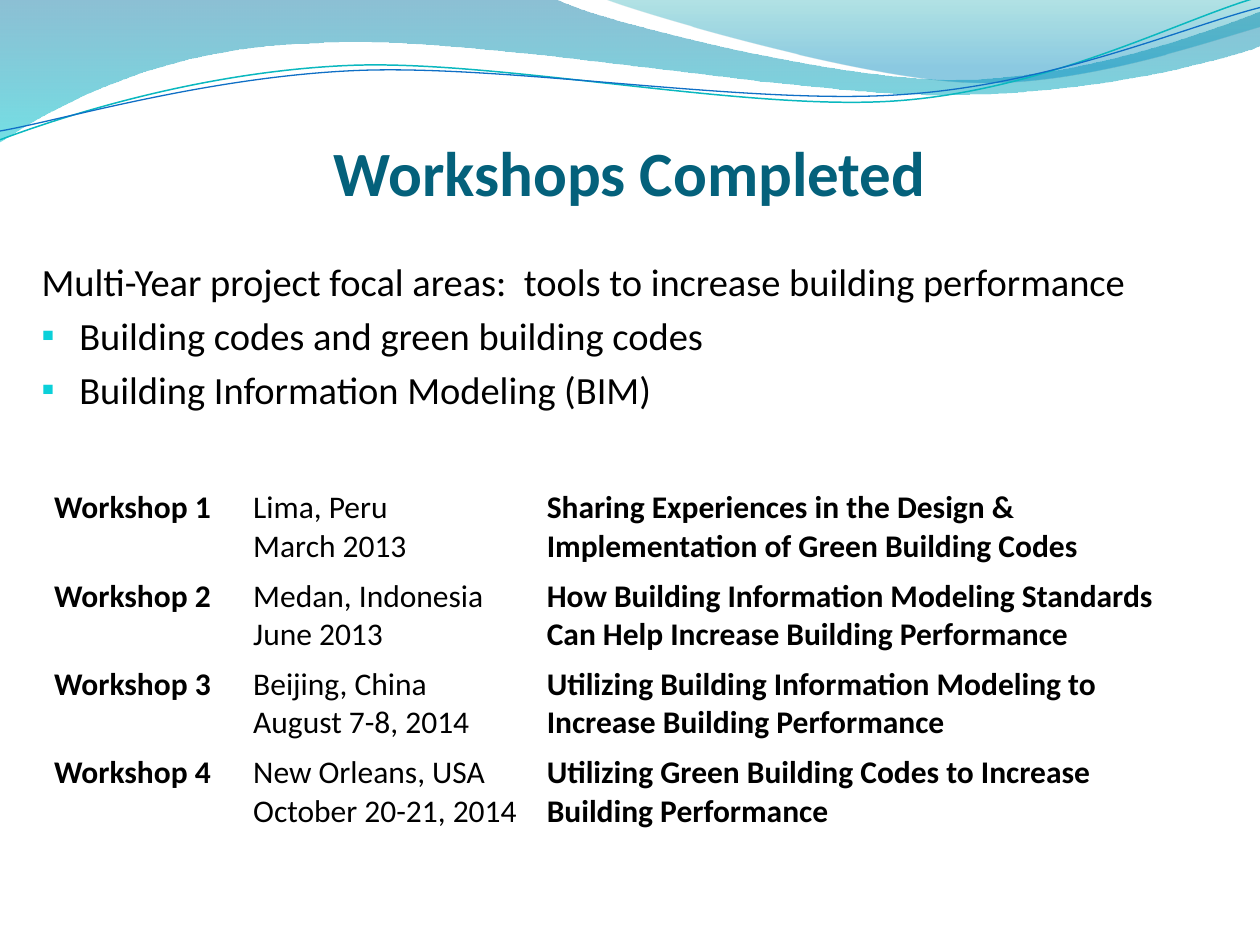
from lxml.etree import SubElement
from pptx import Presentation
from pptx.dml.color import RGBColor
from pptx.enum.text import MSO_ANCHOR as Anchor, PP_ALIGN as Align
from pptx.oxml.ns import qn
from pptx.util import Inches, Pt

TEAL_TITLE = RGBColor(0x04, 0x61, 0x7B)
BLACK = RGBColor(0, 0, 0)
BULLET = RGBColor(0x0B, 0xD0, 0xD9)
DEEP_BLUE = RGBColor(0x00, 0x74, 0xA1)
AQUA = RGBColor(0x00, 0xC6, 0xCF)
SEA_GREEN = RGBColor(0x00, 0xA1, 0xA9)
SKY_BLUE = RGBColor(0x00, 0x8B, 0xBF)
LINE_TEAL = RGBColor(0x0A, 0xB8, 0xBF)
LINE_BLUE = RGBColor(0x0F, 0x6F, 0xC6)

# Each outline is a start point, then segments: 2 numbers a line, 6 a Bezier curve
# Gradient stops are (position, colour, opacity in percent)
BANDS = [
    ([(0, 0), (4.4, -0.01), (4.76, 0.17, 6.64, 0.63, 7.58, 0.63),
      (8.53, 0.63, 9.58, 0.26, 10, 0.09), (10.01, 0.36),
      (9.83, 0.44, 8.7, 0.76, 7.46, 0.75), (6.22, 0.75, 3.82, 0.28, 2.57, 0.34),
      (1.29, 0.36, 0.46, 0.83, -0.01, 1.13)],
     [(0, DEEP_BLUE, 45), (1, AQUA, 55)]),
    ([(4.79, -0.01), (5.09, 0.11, 6.82, 0.62, 7.69, 0.65),
      (8.56, 0.69, 9.61, 0.32, 10, 0.21), (10, 0)],
     [(0, SEA_GREEN, 30), (0.8, SKY_BLUE, 45)]),
]
STRANDS = [
    ([(0, 1.11), (0.48, 0.93, 1.58, 0.57, 2.77, 0.52),
      (3.95, 0.47, 5.93, 0.89, 7.13, 0.8), (8.33, 0.71, 9.38, 0.15, 9.98, -0.02)],
     LINE_TEAL, 0.85),
    ([(0, 1.04), (0.47, 0.96, 1.64, 0.61, 2.83, 0.56),
      (4.03, 0.51, 5.97, 0.84, 7.17, 0.75), (8.36, 0.67, 9.41, 0.21, 10, 0.06)],
     LINE_BLUE, 0.75),
]
FOCAL_INTRO = "Multi-Year project focal areas:  tools to increase building performance"
FOCAL_AREAS = ["Building codes and green building codes",
               "Building Information Modeling (BIM)"]
WORKSHOPS = [
    ("Lima, Peru", "March 2013",
     "Sharing Experiences in the Design & Implementation of Green Building Codes"),
    ("Medan, Indonesia", "June 2013",
     "How Building Information Modeling Standards Can Help Increase Building Performance"),
    ("Beijing, China", "August 7-8, 2014",
     "Utilizing Building Information Modeling to Increase Building Performance"),
    ("New Orleans, USA", "October 20-21, 2014",
     "Utilizing Green Building Codes to Increase Building Performance"),
]
COLUMN_WIDTHS = [1.58, 2.33, 5.41]


def set_attrs(target, values):
    for name, value in values.items():
        setattr(target, name, value)


def write(paragraph, text, size, color=BLACK, bold=False):
    run = paragraph.add_run()
    run.text = text
    set_attrs(run.font, {"name": "Calibri", "size": Pt(size), "bold": bold})
    run.font.color.rgb = color


def add_outline(slide, origin, outline, close):
    """Draw the outline through its end points, then bend the curved segments."""
    left, top = origin
    ends = [(Inches(left + part[-2]), Inches(top + part[-1])) for part in outline]
    builder = slide.shapes.build_freeform(*ends[0], scale=1.0)
    builder.add_line_segments(ends[1:], close=close)
    shape = builder.convert_to_shape()
    shape.shadow.inherit = False
    lines = list(shape._element.spPr.iter(qn("a:lnTo")))
    for line, part in zip(lines, outline[1:]):
        if len(part) == 6:
            line.tag = qn("a:cubicBezTo")
            for index, (x, y) in enumerate([part[0:2], part[2:4]]):
                control = line.makeelement(qn("a:pt"), {
                    "x": str(Inches(left + x) - shape.left),
                    "y": str(Inches(top + y) - shape.top)})
                line.insert(index, control)
    return shape


def add_waves(slide, origin):
    # Translucent bands
    for outline, stops in BANDS:
        band = add_outline(slide, origin, outline, True)
        band.line.fill.background()
        band.fill.gradient()
        band.fill.gradient_angle = 270
        for stop, (position, color, _) in zip(band.fill.gradient_stops, stops):
            stop.position = position
            stop.color.rgb = color
        colors = band._element.spPr.iter(qn("a:srgbClr"))
        for color, (_, _, opacity) in zip(colors, stops):
            SubElement(color, qn("a:alpha"), val=str(opacity * 1000))
    # Thin strands
    for outline, color, width in STRANDS:
        strand = add_outline(slide, origin, outline, False)
        strand.fill.background()
        strand.line.color.rgb = color
        strand.line.width = Pt(width)


def add_text_frame(slide, box, values):
    frame = slide.shapes.add_textbox(*map(Inches, box)).text_frame
    set_attrs(frame, {"word_wrap": True, "margin_left": 0, "margin_right": 0, **values})
    return frame


def add_title(slide, box):
    frame = add_text_frame(slide, box, {"vertical_anchor": Anchor.BOTTOM,
                                        "margin_bottom": 0})
    heading = frame.paragraphs[0]
    heading.alignment = Align.CENTER
    write(heading, "Workshops Completed", 36, TEAL_TITLE, True)


def add_focal_areas(slide, box):
    frame = add_text_frame(slide, box, {})
    intro = frame.paragraphs[0]
    intro.space_before = Pt(4.4)
    write(intro, FOCAL_INTRO, 22)
    for area in FOCAL_AREAS:
        item = frame.add_paragraph()
        item.space_before = Pt(4.4)
        write(item, area, 22)
        props = item._p.get_or_add_pPr()
        props.set("marL", str(Inches(0.3)))
        props.set("indent", str(-Inches(0.3)))
        bullet_color = SubElement(props, qn("a:buClr"))
        SubElement(bullet_color, qn("a:srgbClr"), val=str(BULLET))
        SubElement(props, qn("a:buSzPct"), val="95000")
        SubElement(props, qn("a:buFont"), typeface="Calibri")
        SubElement(props, qn("a:buChar"), char="▪")


def add_workshops(slide, box):
    table = slide.shapes.add_table(len(WORKSHOPS), len(COLUMN_WIDTHS),
                                   *map(Inches, box)).table
    set_attrs(table, {"first_row": False, "horz_banding": False})
    for column, width in zip(table.columns, COLUMN_WIDTHS):
        column.width = Inches(width)
    for index, (place, date, topic) in enumerate(WORKSHOPS):
        entries = [([f"Workshop {index + 1}"], True), ([place, date], False),
                   ([topic], True)]
        for cell, (lines, bold) in zip(table.rows[index].cells, entries):
            cell.fill.background()
            frame = cell.text_frame
            for number, line in enumerate(lines):
                paragraph = frame.add_paragraph() if number else frame.paragraphs[0]
                write(paragraph, line, 18, bold=bold)


def main():
    deck = Presentation()
    set_attrs(deck, {"slide_width": Inches(10), "slide_height": Inches(7.5)})
    slide = deck.slides.add_slide(deck.slide_layouts[6])
    add_waves(slide, (0, 0))
    add_title(slide, (0.5, 0.83, 9, 0.83))
    add_focal_areas(slide, (0.33, 2, 9.42, 5.22))
    add_workshops(slide, (0.33, 3.83, sum(COLUMN_WIDTHS), 2.8))
    deck.save("out.pptx")


if __name__ == "__main__":
    main()
